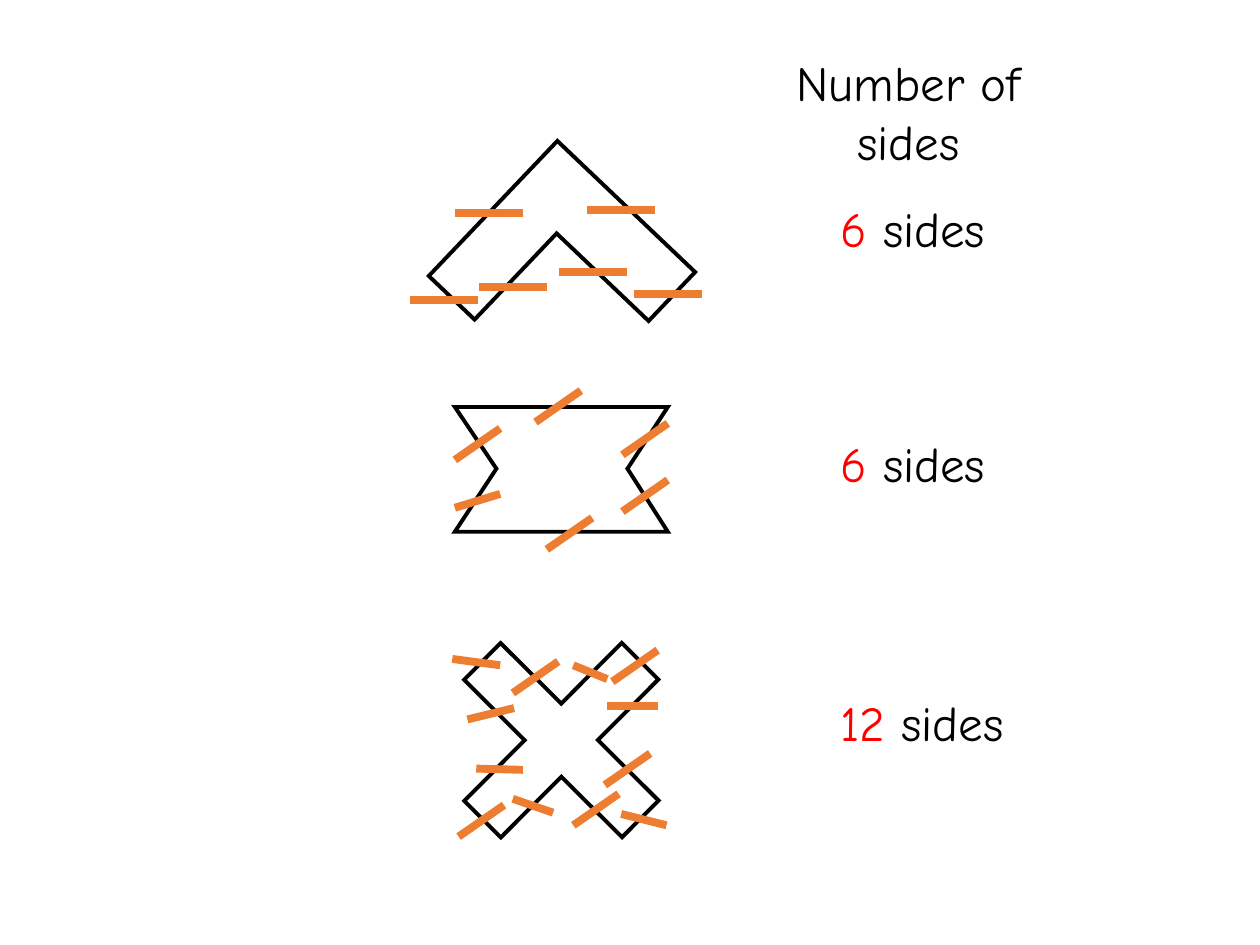
from dataclasses import dataclass

from pptx import Presentation
from pptx.dml.color import RGBColor
from pptx.enum import shapes, text
from pptx.oxml.ns import qn
from pptx.util import Inches, Pt
from lxml import etree


@dataclass(frozen=True)
class Theme:
    paper: RGBColor = RGBColor(0xFF, 0xFF, 0xFF)
    ink: RGBColor = RGBColor(0, 0, 0)
    answer: RGBColor = RGBColor(0xFF, 0, 0)
    tally: RGBColor = RGBColor(0xED, 0x7D, 0x31)
    font: str = "Comic Neue"
    size: Pt = Pt(28)
    outline: Pt = Pt(2.25)
    tally_width: Pt = Pt(4.5)


theme = Theme()


def style_outline(polygon):
    """White fill and a black, sharp-cornered outline without shadow."""
    polygon.shadow.inherit = False
    polygon.fill.solid()
    polygon.fill.fore_color.rgb = theme.paper
    polygon.line.color.rgb = theme.ink
    polygon.line.width = theme.outline
    outline = polygon._element.spPr.find(qn("a:ln"))
    etree.SubElement(outline, qn("a:miter")).set("lim", "800000")


def style_run(run, color):
    run.font.name = theme.font
    run.font.size = theme.size
    run.font.color.rgb = color


prs = Presentation()
prs.slide_width, prs.slide_height = Inches(10), Inches(7.5)
slide = prs.slides.add_slide(prs.slide_layouts[5])

# Heading of the answer column
heading = slide.shapes.title
heading.left, heading.top = Inches(5.78), Inches(0.37)
heading.width, heading.height = Inches(2.86), Inches(1.04)
heading.text_frame.text = "Number of sides"
heading.text_frame.word_wrap = True
heading.text_frame.auto_size = text.MSO_AUTO_SIZE.NONE
heading.text_frame.vertical_anchor = text.MSO_ANCHOR.TOP
heading.text_frame.paragraphs[0].alignment = text.PP_ALIGN.CENTER
style_run(heading.text_frame.paragraphs[0].runs[0], theme.ink)

# Polygons whose sides are counted
presets = [
    (shapes.MSO_SHAPE.CROSS, (3.57, 4.99, 1.77, 1.77), 44.9, [0.384]),
    (shapes.MSO_SHAPE.CORNER, (3.72, 1.42, 1.48, 1.51), 133.6, [0.339, 0.362]),
]
for preset, box, angle, adjustments in presets:
    polygon = slide.shapes.add_shape(preset, *map(Inches, box))
    polygon.rotation = angle
    for i, value in enumerate(adjustments):
        polygon.adjustments[i] = value
    style_outline(polygon)

corners = [(3.61, 3.23), (5.3, 3.23), (4.98, 3.72),
           (5.3, 4.22), (3.61, 4.22), (3.94, 3.72)]
points = [(Inches(x), Inches(y)) for x, y in corners]
builder = slide.shapes.build_freeform(*points[0])
builder.add_line_segments(points[1:], close=True)
style_outline(builder.convert_to_shape())

# Number of sides of each polygon
for count, top in [("6", 1.53), ("6", 3.39), ("12", 5.45)]:
    answer = slide.shapes.add_textbox(
        Inches(6.57), Inches(top), Inches(1.94), Inches(0.57))
    answer.text_frame.word_wrap = True
    paragraph = answer.text_frame.paragraphs[0]
    for words, color in [(count, theme.answer), (" sides", theme.ink)]:
        run = paragraph.add_run()
        run.text = words
        style_run(run, color)

# One tally mark across each side: x1, y1, x2, y2
chevron_marks = [(x, y, x + 0.54, y) for x, y in [
    (3.61, 1.69), (4.66, 1.67), (5.03, 2.33),
    (4.44, 2.16), (3.8, 2.28), (3.25, 2.38)]]
slanted_marks = [(x, y, x + 0.36, y - 0.25) for x, y in [
    (3.61, 3.65), (4.25, 3.35), (4.94, 3.61), (4.94, 4.06), (4.34, 4.36),
    (4.07, 5.5), (4.86, 5.41), (4.8, 6.23), (4.55, 6.55), (3.64, 6.64)]]
other_marks = [
    (3.61, 4.03, 3.97, 3.92), (4.55, 5.28, 4.82, 5.39),
    (4.82, 5.6, 5.22, 5.6), (4.93, 6.46, 5.29, 6.55),
    (4.07, 6.34, 4.39, 6.45), (3.78, 6.1, 4.15, 6.11),
    (3.71, 5.71, 4.08, 5.62), (3.59, 5.23, 3.97, 5.28)]
for ends in chevron_marks + slanted_marks + other_marks:
    mark = slide.shapes.add_connector(
        shapes.MSO_CONNECTOR.STRAIGHT, *map(Inches, ends))
    mark.line.color.rgb = theme.tally
    mark.line.width = theme.tally_width
    etree.SubElement(mark._element.spPr, qn("a:effectLst"))

prs.save("out.pptx")
